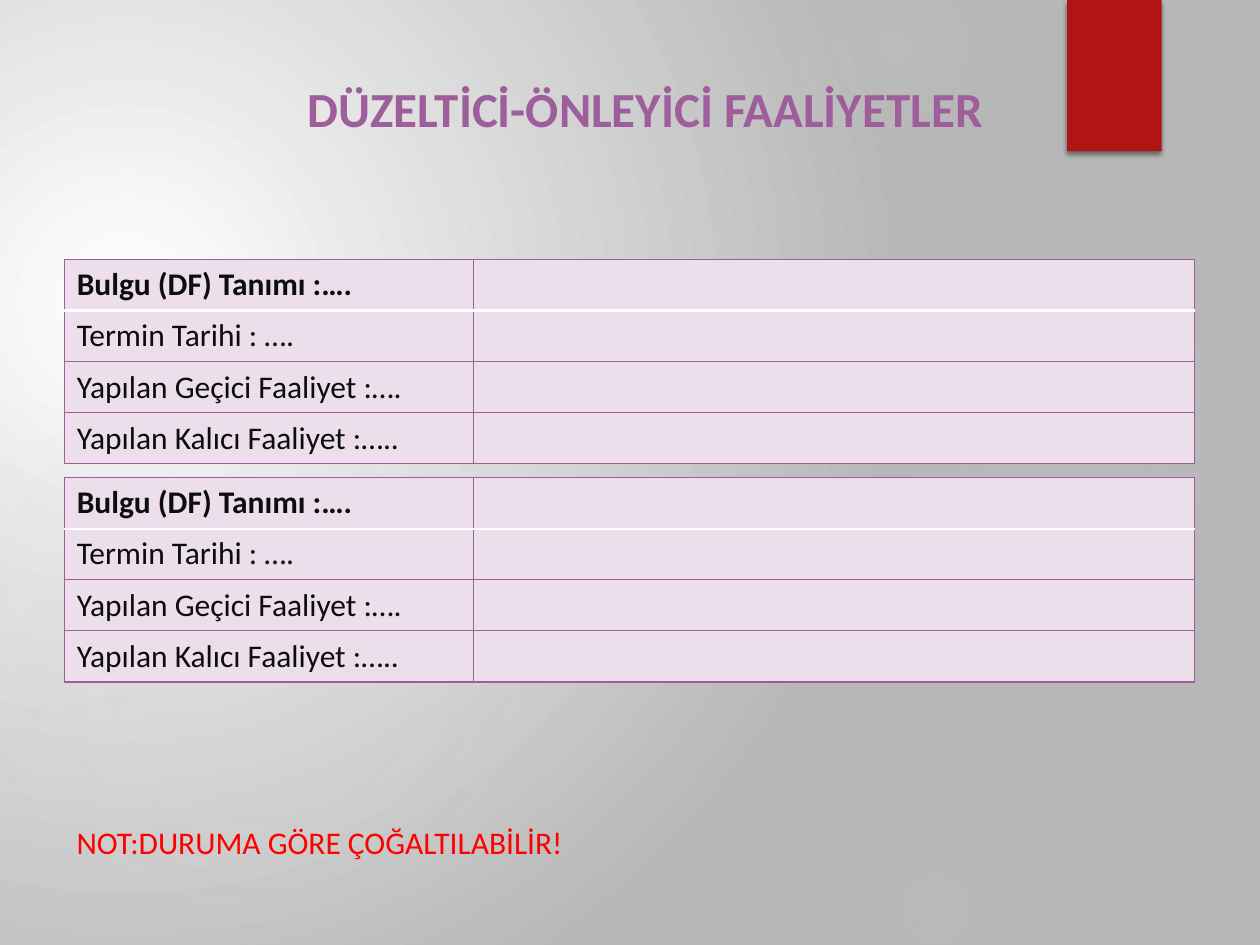
from lxml.etree import SubElement
from pptx import Presentation
from pptx.dml.color import RGBColor
from pptx.enum.shapes import MSO_SHAPE
from pptx.enum.text import MSO_ANCHOR, MSO_AUTO_SIZE, PP_ALIGN
from pptx.oxml.ns import qn
from pptx.util import Inches, Pt

HUES = {"white": "FFFFFF", "gray": "B7B7B7", "glow": "D9D9D9", "tab": "B01513",
        "plum": "9E5E9B", "pale": "ECDFEB", "ink": "0C0D0D", "red": "FF0000",
        "black": "000000"}
WIDE, HIGH = Inches(10), Inches(7.5)
COLS, ROWS = 1000, 750
GLOWS = [
    ((689, 183, 308, 308), [(0, 7), (36, 6), (69, 0)]),
    ((622, -50, 175, 175), [(0, 14), (36, 7), (73, 0)]),
    ((689, 667, 108, 108), [(0, 9), (36, 5), (66, 0)]),
    ((-17, 292, 458, 458), [(0, 11), (36, 10), (75, 0)]),
    ((-92, 317, 258, 258), [(0, 8), (36, 8), (72, 0)]),
]
LABELS = ["Bulgu (DF) Tanımı :….", "Termin Tarihi : ….",
          "Yapılan Geçici Faaliyet :….", "Yapılan Kalıcı Faaliyet :….."]


def grid(box):
    x, y, w, h = box
    return (WIDE * x // COLS, HIGH * y // ROWS,
            WIDE * w // COLS, HIGH * h // ROWS)


def color(name):
    return RGBColor.from_string(HUES[name])


def add(node, tag, **attrs):
    return SubElement(node, qn(tag), {k: str(v) for k, v in attrs.items()})


def tint(node, name, alpha=100):
    hue = add(node, "a:srgbClr", val=HUES[name])
    if alpha < 100:
        add(hue, "a:alpha", val=alpha * 1000)


def radial(root, stops, focus):
    old = root.find(".//" + qn("a:solidFill"))
    grad = add(old.getparent(), "a:gradFill", rotWithShape=1)
    old.getparent().replace(old, grad)
    items = add(grad, "a:gsLst")
    for pos, name, alpha in stops:
        tint(add(items, "a:gs", pos=pos * 1000), name, alpha)
    way = add(grad, "a:path", path="circle")
    add(way, "a:fillToRect", **{k: v * 1000 for k, v in zip("ltrb", focus)})


def style(para, text, size, name, bold=False):
    para.text = text
    font = para.font
    font.name, font.size, font.bold = "Calibri", Pt(size), bold
    font.color.rgb = color(name)


def plain(slide, kind, box, name):
    shape = slide.shapes.add_shape(kind, *grid(box))
    shape.shadow.inherit = False
    shape.fill.solid()
    shape.fill.fore_color.rgb = color(name)
    shape.line.fill.background()
    return shape


def scene(slide):
    slide.background.fill.solid()
    radial(slide.element, [(0, "white", 100), (100, "gray", 100)],
           (45, 65, 125, 100))
    for box, stops in GLOWS:
        disc = plain(slide, MSO_SHAPE.OVAL, box, "glow")
        radial(disc.element, [(p, "glow", a) for p, a in stops], (50,) * 4)


def ribbon(slide, box):
    tab = plain(slide, MSO_SHAPE.RECTANGLE, box, "tab")
    glow = tab.element.find(".//" + qn("a:effectLst"))
    shade = add(glow, "a:outerShdw", blurRad=Pt(3), dist=Pt(2),
                dir=90 * 60000, rotWithShape=0)
    tint(shade, "black", 45)


def heading(slide, box, text):
    title = slide.shapes.title
    slide.shapes.element.append(title.element)
    title.left, title.top, title.width, title.height = grid(box)
    frame = title.text_frame
    frame.word_wrap = True
    frame.auto_size = MSO_AUTO_SIZE.NONE
    frame.vertical_anchor = MSO_ANCHOR.MIDDLE
    para = frame.paragraphs[0]
    style(para, text, 28, "plum", True)
    para.alignment = PP_ALIGN.CENTER
    para.line_spacing = 0.9
    para.space_after = Pt(6)


def edges(cell, row):
    props = cell._tc.get_or_add_tcPr()
    for side in "LRTB":
        rule = (row, side) in ((0, "B"), (1, "T"))
        line = add(props, f"a:ln{side}", w=Pt(1.5 if rule else 0.75))
        tint(add(line, "a:solidFill"), "white" if rule else "plum")


def form(slide, box):
    table = slide.shapes.add_table(len(LABELS), 2, *grid(box)).table
    table.first_row = table.horz_banding = False
    left = WIDE * 325 // COLS
    table.columns[0].width = left
    table.columns[1].width = grid(box)[2] - left
    for row, label in enumerate(LABELS):
        for col, text in enumerate((label, "")):
            cell = table.cell(row, col)
            edges(cell, row)
            cell.fill.solid()
            cell.fill.fore_color.rgb = color("pale")
            style(cell.text_frame.paragraphs[0], text, 18, "ink", row == 0)


def note(slide, box, text):
    frame = slide.shapes.add_textbox(*grid(box)).text_frame
    frame.word_wrap = True
    frame.auto_size = MSO_AUTO_SIZE.SHAPE_TO_FIT_TEXT
    style(frame.paragraphs[0], text, 18, "red")


def main():
    deck = Presentation()
    deck.slide_width, deck.slide_height = WIDE, HIGH
    slide = deck.slides.add_slide(deck.slide_layouts[5])
    scene(slide)
    ribbon(slide, (847, 0, 75, 120))
    heading(slide, (185, 53, 654, 71), "DÜZELTİCİ-ÖNLEYİCİ FAALİYETLER")
    for top in (206, 379):
        form(slide, (51, top, 897, 162))
    note(slide, (51, 648, 681, 40), "NOT:DURUMA GÖRE ÇOĞALTILABİLİR!")
    deck.save("out.pptx")


if __name__ == "__main__":
    main()
